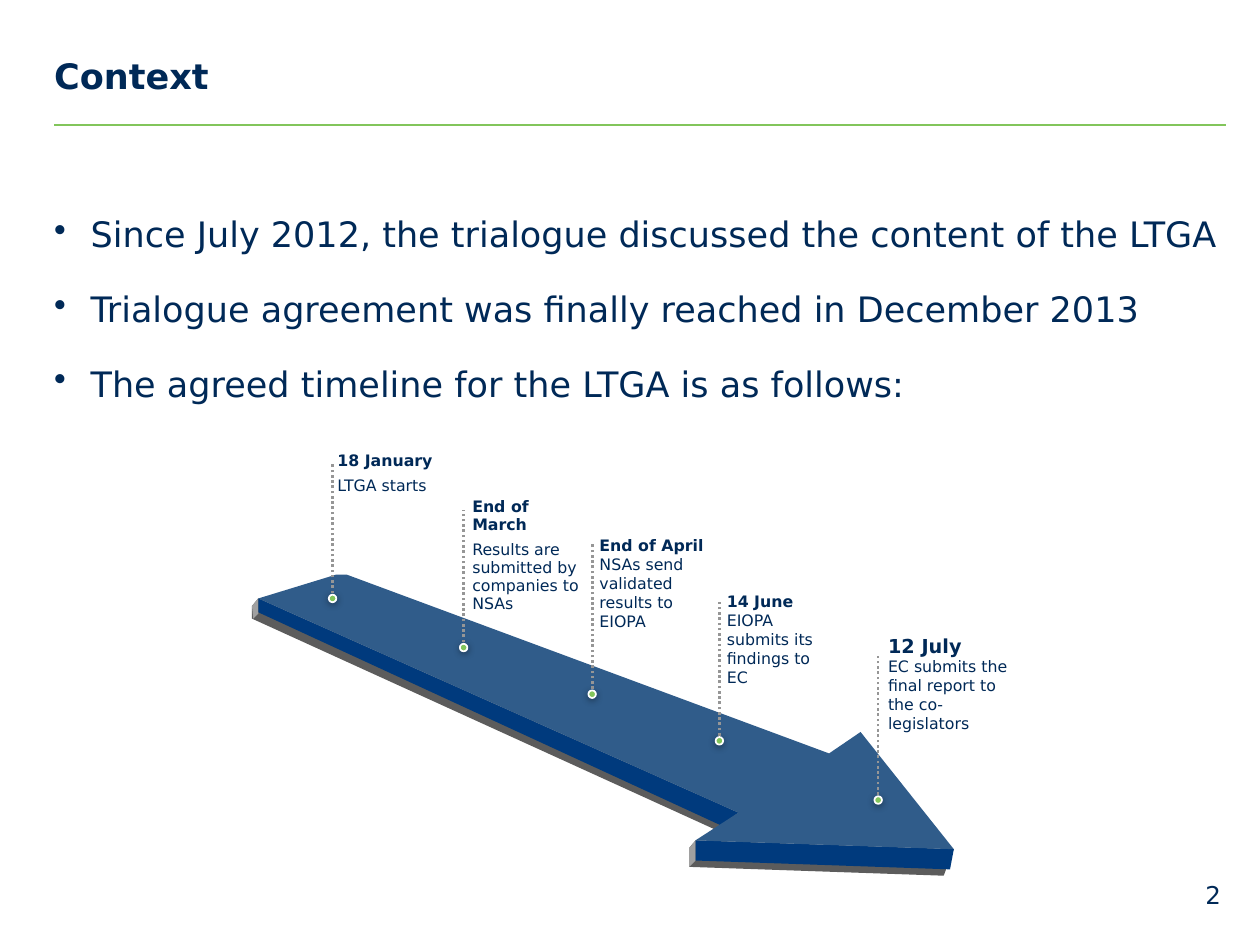
from dataclasses import dataclass

import pptx
import pptx.dml.color
import pptx.enum.dml
import pptx.enum.shapes
import pptx.enum.text
import pptx.oxml
import pptx.oxml.ns
import pptx.util
from pptx.util import Inches

NS = pptx.oxml.ns.nsdecls("a")


@dataclass(frozen=True)
class Theme:
    font: str = "DejaVu Sans"
    navy: str = "002957"
    green: str = "82C55B"
    white: str = "FFFFFF"
    stem: str = "969696"
    arrow_top: str = "305C8A"
    arrow_side: str = "003A7D"
    base: str = "5C5C5C"
    base_end: str = "A0A0A0"
    heading: float = 20
    number: float = 14
    final_date: float = 11
    label: float = 9


THEME = Theme()


@dataclass(frozen=True)
class Milestone:
    date: str
    event: str
    marker: tuple[float, float]
    stem_top: float
    label_box: tuple[float, float, float, float]
    date_size: float = THEME.label
    date_spacing: float = 1.0
    event_spacing: float = 1.0
    gap: float = 0


@dataclass(frozen=True)
class Face:
    color: str
    points: tuple[tuple[float, float], ...]


BULLETS = (
    "Since July 2012, the trialogue discussed the content of the LTGA",
    "Trialogue agreement was finally reached in December 2013",
    "The agreed timeline for the LTGA is as follows:",
)

MILESTONES = (
    Milestone("18 January", "LTGA starts", (2.64, 4.75), 3.68,
              (2.58, 3.59, 1.07, 0.34), date_spacing=0.95, event_spacing=0.95, gap=4),
    Milestone("End of March", "Results are submitted by companies to NSAs", (3.68, 5.14), 4.05,
              (3.65, 3.95, 1.12, 0.78), date_spacing=0.95, event_spacing=0.95, gap=4),
    Milestone("End of April", "NSAs send validated results to EIOPA", (4.7, 5.51), 4.31,
              (4.66, 4.18, 1.03, 0.83), date_spacing=1.5),
    Milestone("14 June", "EIOPA submits its findings to EC", (5.71, 5.88), 4.78,
              (5.67, 4.62, 0.98, 0.83), date_spacing=1.5),
    Milestone("12 July", "EC submits the final report to the co-legislators", (6.97, 6.35), 5.21,
              (6.95, 5.03, 1.2, 0.79), date_size=THEME.final_date),
)

TAIL, NOTCH = (2.05, 4.75), (5.86, 6.45)
WING, TIP = (5.52, 6.67), (7.57, 6.74)
ARROW_FACES = (
    Face(THEME.base, (TAIL, NOTCH, (5.69, 6.59), (2.0, 4.91), (2.0, 4.81))),
    Face(THEME.base, (WING, TIP, (7.49, 6.95), (5.47, 6.88), (5.47, 6.73))),
    Face(THEME.base_end, (TAIL, (2.05, 4.87), (2.01, 4.91), (2.0, 4.81))),
    Face(THEME.base_end, (WING, (5.52, 6.83), (5.47, 6.88), (5.47, 6.73))),
    Face(THEME.arrow_side, (TAIL, NOTCH, (5.72, 6.55), (2.05, 4.86))),
    Face(THEME.arrow_side, (WING, TIP, (7.54, 6.9), (5.52, 6.83))),
    Face(THEME.arrow_top, (TAIL, (2.67, 4.56), (2.75, 4.56), (6.58, 5.98),
                           (6.83, 5.81), TIP, WING, NOTCH)),
)


def rgb(color: str) -> pptx.dml.color.RGBColor:
    return pptx.dml.color.RGBColor.from_string(color)


def add_text(slide, box: tuple[float, ...], lines: tuple[str, ...], inset: float = 0):
    frame = slide.shapes.add_textbox(*map(Inches, box)).text_frame
    frame.word_wrap = True
    frame.margin_left = frame.margin_right = Inches(inset)
    frame.margin_top = frame.margin_bottom = 0
    frame.text = "\n".join(lines)
    return frame


def style(paragraph, size: float, bold: bool = False) -> None:
    for run in paragraph.runs:
        run.font.name = THEME.font
        run.font.size = pptx.util.Pt(size)
        run.font.bold = bold
        run.font.color.rgb = rgb(THEME.navy)


def add_line(slide, start: tuple[float, float], end: tuple[float, float],
             color: str, width: float):
    line = slide.shapes.add_connector(
        pptx.enum.shapes.MSO_CONNECTOR.STRAIGHT, *map(Inches, (*start, *end)))
    line.line.color.rgb = rgb(color)
    line.line.width = pptx.util.Pt(width)
    line._element.spPr.append(pptx.oxml.parse_xml(f"<a:effectLst {NS}/>"))
    return line


def add_bullets(slide) -> None:
    frame = add_text(slide, (0.43, 1.69, 9.37, 4.9), BULLETS)
    for index, paragraph in enumerate(frame.paragraphs):
        properties = paragraph._p.get_or_add_pPr()
        properties.set("marL", str(Inches(0.29)))
        properties.set("indent", str(-Inches(0.29)))
        for bullet in (f'<a:buClr {NS}><a:srgbClr val="{THEME.navy}"/></a:buClr>',
                       f'<a:buChar {NS} char="•"/>'):
            properties.append(pptx.oxml.parse_xml(bullet))
        if index:
            paragraph.space_before = pptx.util.Pt(18.7)
        style(paragraph, THEME.heading)


def add_face(slide, face: Face) -> None:
    start, *corners = [tuple(map(Inches, point)) for point in face.points]
    builder = slide.shapes.build_freeform(*start)
    builder.add_line_segments(corners, close=True)
    shape = builder.convert_to_shape()
    shape.shadow.inherit = False
    shape.fill.solid()
    shape.fill.fore_color.rgb = rgb(face.color)
    shape.line.fill.background()


def add_marker(slide, center: tuple[float, float], size: float = 0.06) -> None:
    left, top = (value - size / 2 for value in center)
    marker = slide.shapes.add_shape(
        pptx.enum.shapes.MSO_SHAPE.OVAL, *map(Inches, (left, top, size, size)))
    marker.fill.solid()
    marker.fill.fore_color.rgb = rgb(THEME.green)
    marker.line.color.rgb = rgb(THEME.white)
    marker.line.width = pptx.util.Pt(1)
    marker._element.spPr.append(pptx.oxml.parse_xml(
        f'<a:effectLst {NS}><a:outerShdw blurRad="{pptx.util.Pt(4)}" dist="{pptx.util.Pt(1)}" '
        'dir="5400000" rotWithShape="0"><a:srgbClr val="000000"><a:alpha val="40000"/>'
        '</a:srgbClr></a:outerShdw></a:effectLst>'))


def add_milestone(slide, milestone: Milestone) -> None:
    x, _ = milestone.marker
    stem = add_line(slide, milestone.marker, (x, milestone.stem_top), THEME.stem, 1.5)
    stem.line.dash_style = pptx.enum.dml.MSO_LINE.ROUND_DOT
    add_marker(slide, milestone.marker)
    frame = add_text(slide, milestone.label_box, (milestone.date, milestone.event), 0.1)
    date, event = frame.paragraphs
    date.line_spacing = milestone.date_spacing
    event.line_spacing = milestone.event_spacing
    date.space_after = pptx.util.Pt(milestone.gap)
    style(date, milestone.date_size, bold=True)
    style(event, THEME.label)


def main() -> None:
    presentation = pptx.Presentation()
    presentation.slide_width, presentation.slide_height = Inches(10), Inches(7.5)
    slide = presentation.slides.add_slide(presentation.slide_layouts[6])

    add_line(slide, (0.43, 0.99), (9.73, 0.99), THEME.green, 1)
    title = add_text(slide, (0.43, 0.43, 9.29, 0.34), ("Context",))
    style(title.paragraphs[0], THEME.heading, bold=True)
    add_bullets(slide)

    for face in ARROW_FACES:
        add_face(slide, face)
    for milestone in MILESTONES:
        add_milestone(slide, milestone)

    number = add_text(slide, (7.36, 6.85, 2.33, 0.37), ("2",))
    number.vertical_anchor = pptx.enum.text.MSO_ANCHOR.BOTTOM
    number.paragraphs[0].alignment = pptx.enum.text.PP_ALIGN.RIGHT
    style(number.paragraphs[0], THEME.number)
    presentation.save("out.pptx")


if __name__ == "__main__":
    main()
